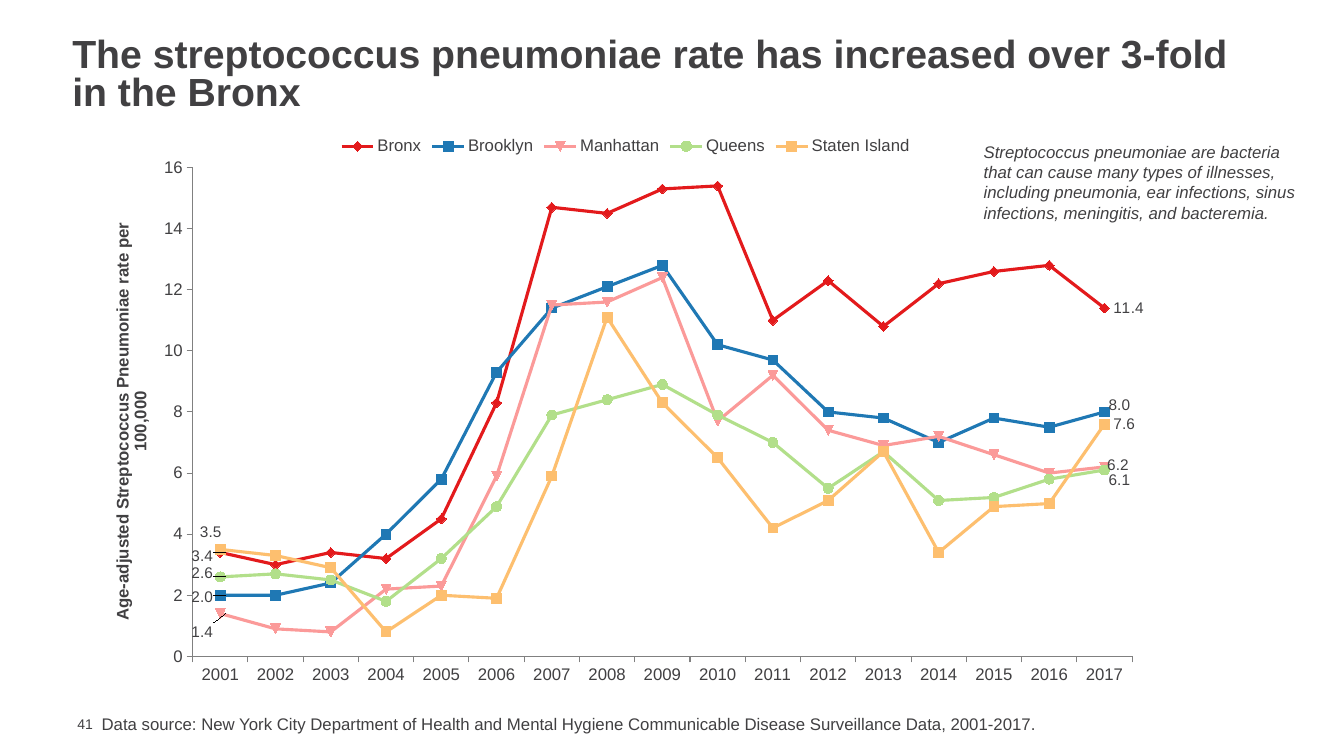
"""Build the slide on streptococcus pneumoniae rates by New York City borough."""
from lxml.etree import SubElement, fromstring
from pptx import Presentation
from pptx.chart.data import CategoryChartData
from pptx.dml.color import RGBColor
from pptx.enum.chart import XL_CHART_TYPE as ChartType, XL_LABEL_POSITION as LabelPos
from pptx.enum.chart import XL_LEGEND_POSITION as LegendPos, XL_MARKER_STYLE as Marker
from pptx.enum.chart import XL_TICK_MARK as Tick
from pptx.enum.text import MSO_ANCHOR as Anchor
from pptx.oxml.ns import qn
from pptx.util import Pt

THEME = {
    "font": "Arial", "ink": "414042", "axis": "808080",
    "title": 28, "body": 12, "label": 11, "page": 10,
    "line": 2.25, "axis_line": 0.75, "marker": 7,
}
TITLE = ["The streptococcus pneumoniae rate has increased over 3-fold", "in the Bronx"]
NOTE = ["Streptococcus pneumoniae are bacteria that can cause many types of illnesses, "
        "including pneumonia, ear infections, sinus infections, meningitis, and bacteremia."]
SOURCE = ["Data source: New York City Department of Health and Mental Hygiene "
          "Communicable Disease Surveillance Data, 2001-2017."]
PAGE = ["41"]
RATE_TITLE = "Age-adjusted Streptococcus Pneumoniae rate per 100,000"
YEARS = [str(year) for year in range(2001, 2018)]
BOROUGHS = [
    {"name": "Bronx", "color": "E31A1C", "marker": Marker.DIAMOND,
     "rates": [3.4, 3, 3.4, 3.2, 4.5, 8.3, 14.7, 14.5, 15.3, 15.4, 11, 12.3, 10.8,
               12.2, 12.6, 12.8, 11.4],
     "shifts": [(-27, 2), (0, 0)]},
    {"name": "Brooklyn", "color": "1F78B4", "marker": Marker.SQUARE,
     "rates": [2, 2, 2.4, 4, 5.8, 9.3, 11.4, 12.1, 12.8, 10.2, 9.7, 8, 7.8, 7, 7.8, 7.5, 8],
     "shifts": [(-27, 1), (-3.5, -5)]},
    {"name": "Manhattan", "color": "FB9A99", "marker": Marker.AUTOMATIC,
     "rates": [1.4, 0.9, 0.8, 2.2, 2.3, 5.9, 11.5, 11.6, 12.4, 7.7, 9.2, 7.4, 6.9, 7.2,
               6.6, 6, 6.2],
     "shifts": [(-27, 13), (-4.5, -1.5)]},
    {"name": "Queens", "color": "B2DF8A", "marker": Marker.CIRCLE,
     "rates": [2.6, 2.7, 2.5, 1.8, 3.2, 4.9, 7.9, 8.4, 8.9, 7.9, 7, 5.5, 6.7, 5.1, 5.2,
               5.8, 6.1],
     "shifts": [(-27, -3), (-3.5, 7)]},
    {"name": "Staten Island", "color": "FDBF6F", "marker": Marker.SQUARE,
     "rates": [3.5, 3.3, 2.9, 0.8, 2, 1.9, 5.9, 11.1, 8.3, 6.5, 4.2, 5.1, 6.7, 3.4, 4.9,
               5, 7.6],
     "shifts": [(-21, -12.5), (0, 0)]},
]
CHART_BOX = (77.8, 90, 739.4, 401.8)
PLOT = {"x": 0.081, "y": 0.074, "w": 0.909, "h": 0.869}
C15 = "http://schemas.microsoft.com/office/drawing/2012/chart"
LEADER_LINES = (
    f'<c:extLst xmlns:c="http://schemas.openxmlformats.org/drawingml/2006/chart">'
    f'<c:ext uri="{{CE6537A1-D6FC-4f65-9D91-7224C49458BB}}" xmlns:c15="{C15}">'
    f'<c15:showLeaderLines val="1"/></c:ext></c:extLst>')


def apply(target, **values):
    for name, value in values.items():
        setattr(target, name, value)


def style_font(font, size, **values):
    apply(font, name=THEME["font"], size=Pt(THEME[size]), **values)
    font.color.rgb = RGBColor.from_string(THEME["ink"])


def paint(fill, color):
    fill.solid()
    fill.fore_color.rgb = RGBColor.from_string(color)


def draw_line(line, color, width):
    paint(line.fill, color)
    line.width = Pt(THEME[width])


def add_text(slide, box, lines, size, frame_format=None, spacing=None, **font_format):
    frame = slide.shapes.add_textbox(*map(Pt, box)).text_frame
    apply(frame, word_wrap=True, **(frame_format or {}))
    for index, line in enumerate(lines):
        paragraph = frame.add_paragraph() if index else frame.paragraphs[0]
        paragraph.line_spacing = spacing
        run = paragraph.add_run()
        run.text = line
        style_font(run.font, size, **font_format)


def add_layout(parent, position, **values):
    layout = parent.find(qn("c:layout"))
    if layout is None:
        layout = SubElement(parent, qn("c:layout"))
        parent.insert(position, layout)
    manual = SubElement(layout, qn("c:manualLayout"))
    for name, value in values.items():
        SubElement(manual, qn(f"c:{name}")).set("val", str(value))


def style_borough(series, borough):
    series.smooth = False
    draw_line(series.format.line, borough["color"], "line")
    apply(series.marker, style=borough["marker"], size=THEME["marker"])
    paint(series.marker.format.fill, borough["color"])
    draw_line(series.marker.format.line, borough["color"], "axis_line")
    series.data_labels.show_value = False
    ends = (0, len(YEARS) - 1)
    for end in ends:
        label = series.points[end].data_label
        style_font(label.font, "label")
        label.position = LabelPos.RIGHT
    labels = series.data_labels._element
    for label, (across, down) in zip(labels.findall(qn("c:dLbl")), borough["shifts"]):
        if across or down:
            add_layout(label, 1, x=round(across / CHART_BOX[2], 4),
                       y=round(down / CHART_BOX[3], 4))
    labels.append(fromstring(LEADER_LINES))


def add_rate_chart(slide):
    data = CategoryChartData(number_format="0.0")
    data.categories = YEARS
    for borough in BOROUGHS:
        data.add_series(borough["name"], borough["rates"])
    chart = slide.shapes.add_chart(ChartType.LINE_MARKERS, *map(Pt, CHART_BOX), data).chart
    style_font(chart.font, "page")
    apply(chart, has_title=False, has_legend=True)
    apply(chart.legend, position=LegendPos.TOP, include_in_layout=False)
    style_font(chart.legend.font, "body")
    chart.plots[0].vary_by_categories = False
    years, rates = chart.category_axis, chart.value_axis
    for axis in (years, rates):
        apply(axis, has_major_gridlines=False, major_tick_mark=Tick.OUTSIDE,
              minor_tick_mark=Tick.NONE)
        style_font(axis.tick_labels.font, "body")
        draw_line(axis.format.line, THEME["axis"], "axis_line")
    apply(rates, minimum_scale=0, maximum_scale=16, major_unit=2)
    apply(rates.tick_labels, number_format="0", number_format_is_linked=False)
    title = rates.axis_title.text_frame.paragraphs[0].add_run()
    title.text = RATE_TITLE
    style_font(title.font, "body", bold=True)
    for series, borough in zip(chart.plots[0].series, BOROUGHS):
        style_borough(series, borough)
    plot_area = chart._chartSpace.chart.plotArea
    add_layout(plot_area, 0, layoutTarget="inner", xMode="edge", yMode="edge", **PLOT)


def main():
    deck = Presentation()
    apply(deck, slide_width=Pt(960), slide_height=Pt(540))
    slide = deck.slides.add_slide(deck.slide_layouts[6])
    add_text(slide, (48.2, 511.2, 31, 12.2), PAGE, "page",
             {"vertical_anchor": Anchor.MIDDLE, "margin_top": 0, "margin_right": 0,
              "margin_bottom": 0})
    add_text(slide, (65.5, 506.2, 714.2, 21.6), SOURCE, "body")
    add_rate_chart(slide)
    add_text(slide, (44.6, 23.8, 869.8, 61.2), TITLE, "title",
             {"vertical_anchor": Anchor.MIDDLE}, 0.8, bold=True)
    add_text(slide, (695.5, 97.8, 246.2, 65.5), NOTE, "body", italic=True)
    deck.save("out.pptx")


if __name__ == "__main__":
    main()
